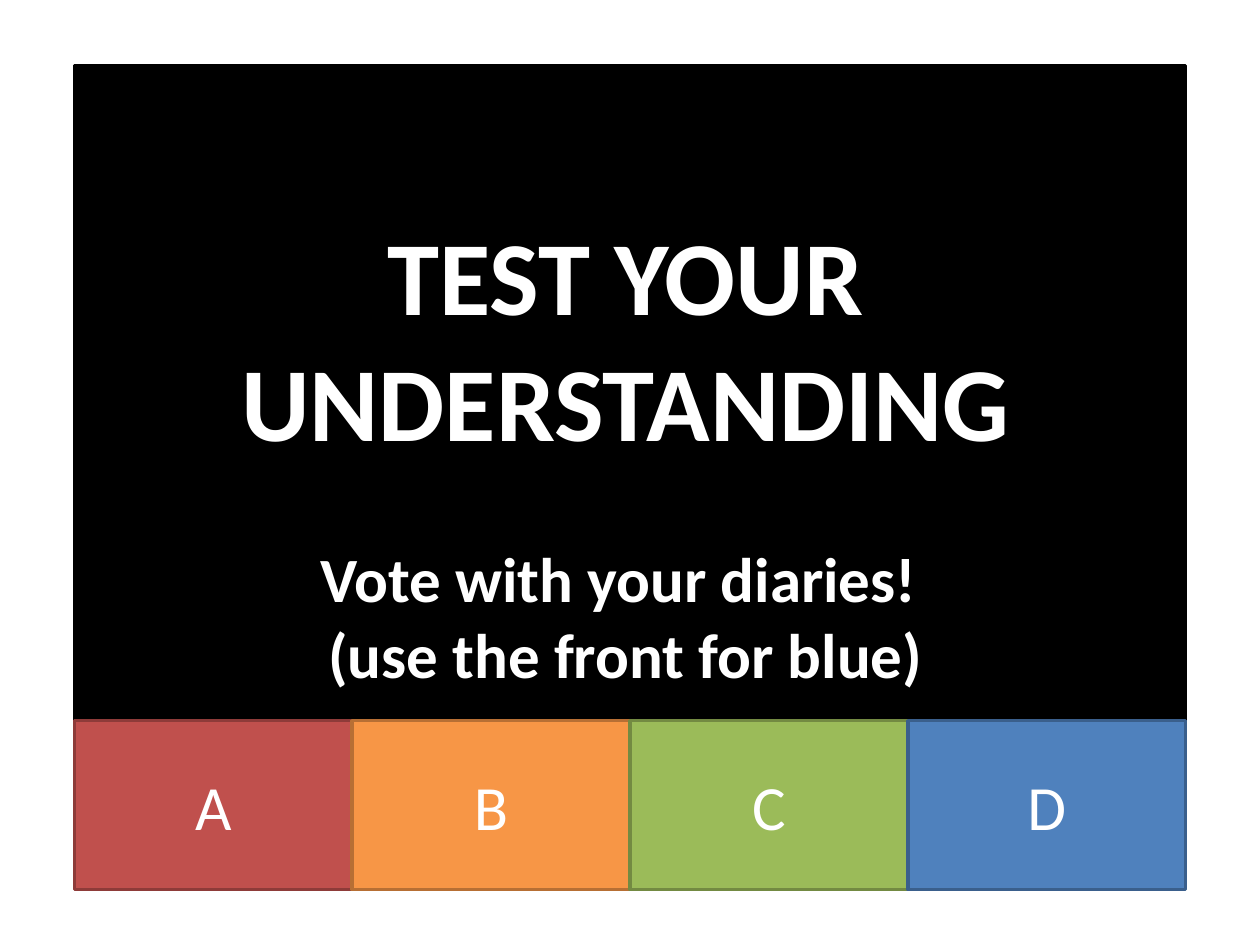
from pptx import Presentation
from pptx.dml.color import RGBColor
from pptx.enum.shapes import MSO_SHAPE
from pptx.enum.text import MSO_ANCHOR, PP_ALIGN
from pptx.util import Inches, Pt

COLORS = {
    "panel": "000000",
    "text": "FFFFFF",
    "red": "C0504D",
    "red_edge": "8E3B39",
    "orange": "F79646",
    "orange_edge": "B76F34",
    "green": "9BBB59",
    "green_edge": "738A42",
    "blue": "4F81BD",
    "blue_edge": "3A5F8C",
}
FONT = "Calibri"
ANSWERS = [("A", "red"), ("B", "orange"), ("C", "green"), ("D", "blue")]
MESSAGE = [
    ("TEST YOUR UNDERSTANDING", 60, 0),
    ("Vote with your diaries! ", 36, 44),
    ("(use the front for blue)", 36, 0),
]


def rgb(name):
    return RGBColor.from_string(COLORS[name])


def add_block(slide, left, top, width, height, fill, edge):
    block = slide.shapes.add_shape(
        MSO_SHAPE.RECTANGLE, Inches(left), Inches(top), Inches(width), Inches(height))
    block.shadow.inherit = False
    block.fill.solid()
    block.fill.fore_color.rgb = rgb(fill)
    block.line.color.rgb = rgb(edge)
    block.line.width = Pt(2)
    return block


def write_line(paragraph, text, size, bold=False):
    paragraph.text = text
    paragraph.alignment = PP_ALIGN.CENTER
    font = paragraph.runs[0].font
    font.name = FONT
    font.size = Pt(size)
    font.bold = bold
    font.color.rgb = rgb("text")


def add_message(slide, left, top, width, height):
    add_block(slide, left, top, width, height, "panel", "panel")
    message = slide.shapes.add_textbox(
        Inches(left + 0.16), Inches(top + 0.08), Inches(width - 0.39), Inches(height - 0.25))
    frame = message.text_frame
    frame.word_wrap = True
    frame.margin_top = Inches(1.07)
    for index, (text, size, gap) in enumerate(MESSAGE):
        paragraph = frame.add_paragraph() if index else frame.paragraphs[0]
        write_line(paragraph, text, size, bold=True)
        paragraph.space_before = Pt(gap)


def add_answers(slide, left, top, width, height):
    step = width / len(ANSWERS)
    for index, (letter, color) in enumerate(ANSWERS):
        answer = add_block(
            slide, left + index * step, top, step, height, color, f"{color}_edge")
        answer.text_frame.vertical_anchor = MSO_ANCHOR.MIDDLE
        write_line(answer.text_frame.paragraphs[0], letter, 36)


def main():
    presentation = Presentation()
    presentation.slide_width = Inches(10)
    presentation.slide_height = Inches(7.5)
    slide = presentation.slides.add_slide(presentation.slide_layouts[6])
    add_message(slide, 0.59, 0.52, 8.82, 5.2)
    add_answers(slide, 0.59, 5.72, 8.82, 1.34)
    presentation.save("out.pptx")


if __name__ == "__main__":
    main()
